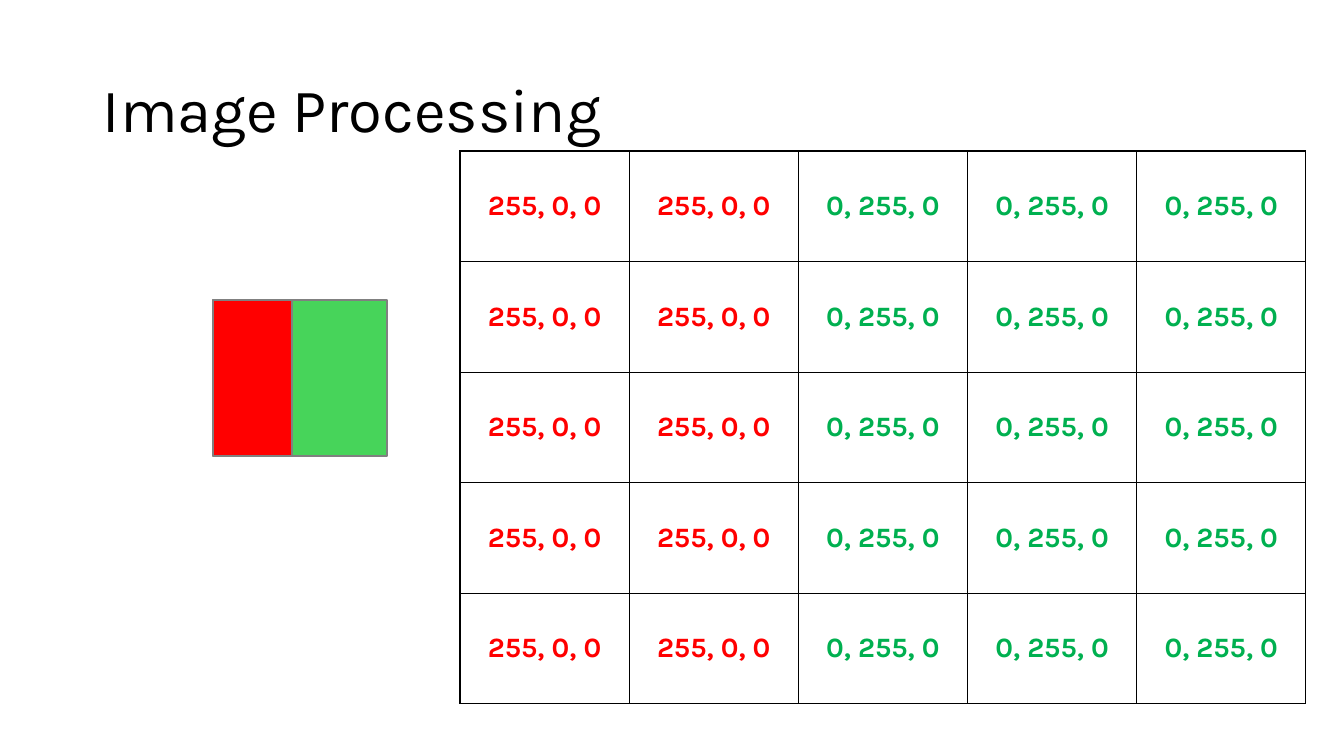
from lxml import etree
from pptx import Presentation
from pptx.dml.color import RGBColor
from pptx.enum.shapes import MSO_SHAPE
from pptx.enum.text import MSO_ANCHOR, PP_ALIGN
from pptx.oxml.ns import qn
from pptx.util import Emu, Pt

RECT = MSO_SHAPE.RECTANGLE
MIDDLE = MSO_ANCHOR.MIDDLE
CENTER = PP_ALIGN.CENTER
FONT = "Karla"
COLORS = {
    "black": "000000",
    "white": "FFFFFF",
    "red": "FF0000",
    "green text": "00B050",
    "green block": "47D45A",
    "outline": "808080",
}
ROWS = 5
PIXELS = [("255, 0, 0", "red")] * 2 + [("0, 255, 0", "green text")] * 3


def px(n):
    """Turn pixels (100.8 to the inch) into EMU."""
    return Emu(round(n * 914400 / 100.8))


def add_run(p, text, size, color, bold=False):
    r = p.add_run()
    r.text = text
    r.font.name = FONT
    r.font.size = Pt(size)
    r.font.bold = bold
    r.font.color.rgb = RGBColor.from_string(COLORS[color])


prs = Presentation()
prs.slide_width, prs.slide_height = px(1344), px(756)
s = prs.slides.add_slide(prs.slide_layouts[6])

# Title
title = s.shapes.add_textbox(px(93), px(40), px(1159), px(146))
tf = title.text_frame
tf.word_wrap = True
tf.vertical_anchor = MIDDLE
p = tf.paragraphs[0]
p.line_spacing = 0.9
add_run(p, "Image Processing", 44, "black")

# Grid of RGB values
frame = s.shapes.add_table(ROWS, len(PIXELS), px(460), px(151), px(846), px(553))
table = frame.table
table.first_row = table.horz_banding = False
for row in table.rows:
    for cell, (value, color) in zip(row.cells, PIXELS):
        cell.vertical_anchor = MIDDLE
        tcPr = cell._tc.get_or_add_tcPr()
        for side in ("a:lnL", "a:lnR", "a:lnT", "a:lnB"):
            ln = etree.SubElement(tcPr, qn(side), w=str(Pt(1)))
            fill = etree.SubElement(ln, qn("a:solidFill"))
            etree.SubElement(fill, qn("a:srgbClr"), val=COLORS["black"])
        cell.fill.solid()
        cell.fill.fore_color.rgb = RGBColor.from_string(COLORS["white"])
        p = cell.text_frame.paragraphs[0]
        p.alignment = CENTER
        add_run(p, value, 20, color, bold=True)

# Two-colour sample: the red block covers the left part of the green one
for width, color in [(174, "green block"), (79, "red")]:
    sp = s.shapes.add_shape(RECT, px(213), px(300), px(width), px(156))
    sp.shadow.inherit = False
    sp.fill.solid()
    sp.fill.fore_color.rgb = RGBColor.from_string(COLORS[color])
    sp.line.color.rgb = RGBColor.from_string(COLORS["outline"])
    sp.line.width = Pt(1.5)

prs.save("out.pptx")
